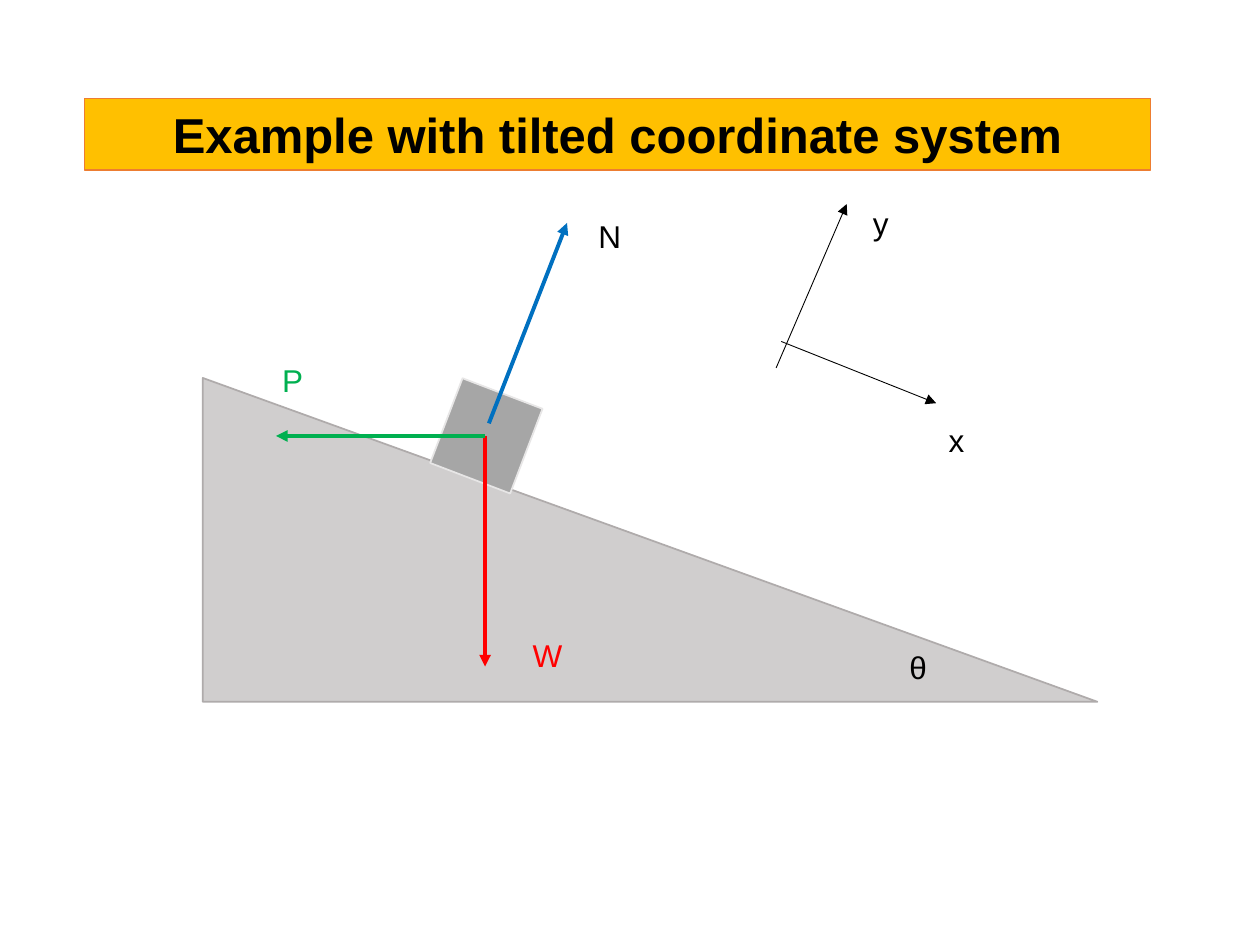
from lxml.etree import SubElement
from pptx import Presentation
from pptx.dml.color import RGBColor
from pptx.enum.shapes import MSO_CONNECTOR, MSO_SHAPE
from pptx.enum.text import MSO_ANCHOR, MSO_AUTO_SIZE, PP_ALIGN
from pptx.oxml.ns import qn
from pptx.util import Inches, Pt

BLACK, RED, GREEN, BLUE = "000000", "FF0000", "00B050", "0070C0"
TITLE = "Example with tilted coordinate system"
ORIGIN = (3.85, 3.46)  # where weight and push act on the block

# preset, (left, top, width, height), rotation, fill, line colour, line width
BODIES = {
    "incline": (MSO_SHAPE.RIGHT_TRIANGLE, (1.61, 3, 7.1, 2.57), 0, "D0CECE", "AFABAB", 1),
    "block": (MSO_SHAPE.RECTANGLE, (3.52, 3.1, 0.68, 0.72), 20.9, "A6A6A6", "E7E6E6", 1),
    "banner": (MSO_SHAPE.RECTANGLE, (0.67, 0.78, 8.46, 0.57), 0, "FFC000", "ED7D31", 0.75),
}
# start, end, colour, width
ARROWS = [
    ((3.88, 3.36), (4.5, 1.77), BLUE, 2.25),     # normal force
    ((6.16, 2.92), (6.72, 1.62), BLACK, 0.5),    # y axis
    ((6.2, 2.71), (7.43, 3.2), BLACK, 0.5),      # x axis
    (ORIGIN, (ORIGIN[0], 5.29), RED, 2.25),      # weight
    (ORIGIN, (2.19, ORIGIN[1]), GREEN, 2.25),    # push
]
# text, left, top, width, colour
LABELS = [
    ("x", 7.43, 3.29, 0.33, BLACK),
    ("y", 6.83, 1.57, 0.33, BLACK),
    ("N", 4.65, 1.67, 0.38, BLACK),
    ("W", 4.13, 5, 0.44, RED),
    ("P", 2.14, 2.82, 0.38, GREEN),
    ("θ", 7.12, 5.09, 0.34, BLACK),
]
LABEL_HEIGHT = 0.4


def rgb(code):
    return RGBColor.from_string(code)


def inches(lengths):
    return [Inches(length) for length in lengths]


def style_line(line, color, width):
    line.color.rgb = rgb(color)
    line.width = Pt(width)


def write(frame, text, size, color, bold=False):
    paragraph = frame.paragraphs[0]
    paragraph.text = text
    font = paragraph.font
    font.name, font.size, font.bold = "Arial", Pt(size), bold
    font.color.rgb = rgb(color)
    return paragraph


def add_body(slide, preset, box, rotation, fill, line_color, line_width):
    body = slide.shapes.add_shape(preset, *inches(box))
    body.rotation = rotation
    body.shadow.inherit = False
    body.fill.solid()
    body.fill.fore_color.rgb = rgb(fill)
    style_line(body.line, line_color, line_width)
    return body


def add_arrow(slide, start, end, color, width):
    arrow = slide.shapes.add_connector(MSO_CONNECTOR.STRAIGHT, *inches(start + end))
    style_line(arrow.line, color, width)
    SubElement(arrow.line._get_or_add_ln(), qn("a:tailEnd"), type="triangle")
    SubElement(arrow._element.spPr, qn("a:effectLst"))


def add_label(slide, text, left, top, width, color):
    box = inches((left, top, width, LABEL_HEIGHT))
    frame = slide.shapes.add_textbox(*box).text_frame
    frame.word_wrap = False
    frame.auto_size = MSO_AUTO_SIZE.SHAPE_TO_FIT_TEXT
    write(frame, text, 18, color)


def main():
    deck = Presentation()
    deck.slide_width, deck.slide_height = inches((10, 7.5))
    slide = deck.slides.add_slide(deck.slide_layouts[6])

    # Incline, block and title banner
    bodies = {part: add_body(slide, *look) for part, look in BODIES.items()}
    frame = bodies["banner"].text_frame
    frame.vertical_anchor = MSO_ANCHOR.MIDDLE
    write(frame, TITLE, 28, BLACK, bold=True).alignment = PP_ALIGN.CENTER

    # Forces and axes, then their names
    for arrow in ARROWS:
        add_arrow(slide, *arrow)
    for label in LABELS:
        add_label(slide, *label)

    deck.save("out.pptx")


if __name__ == "__main__":
    main()
